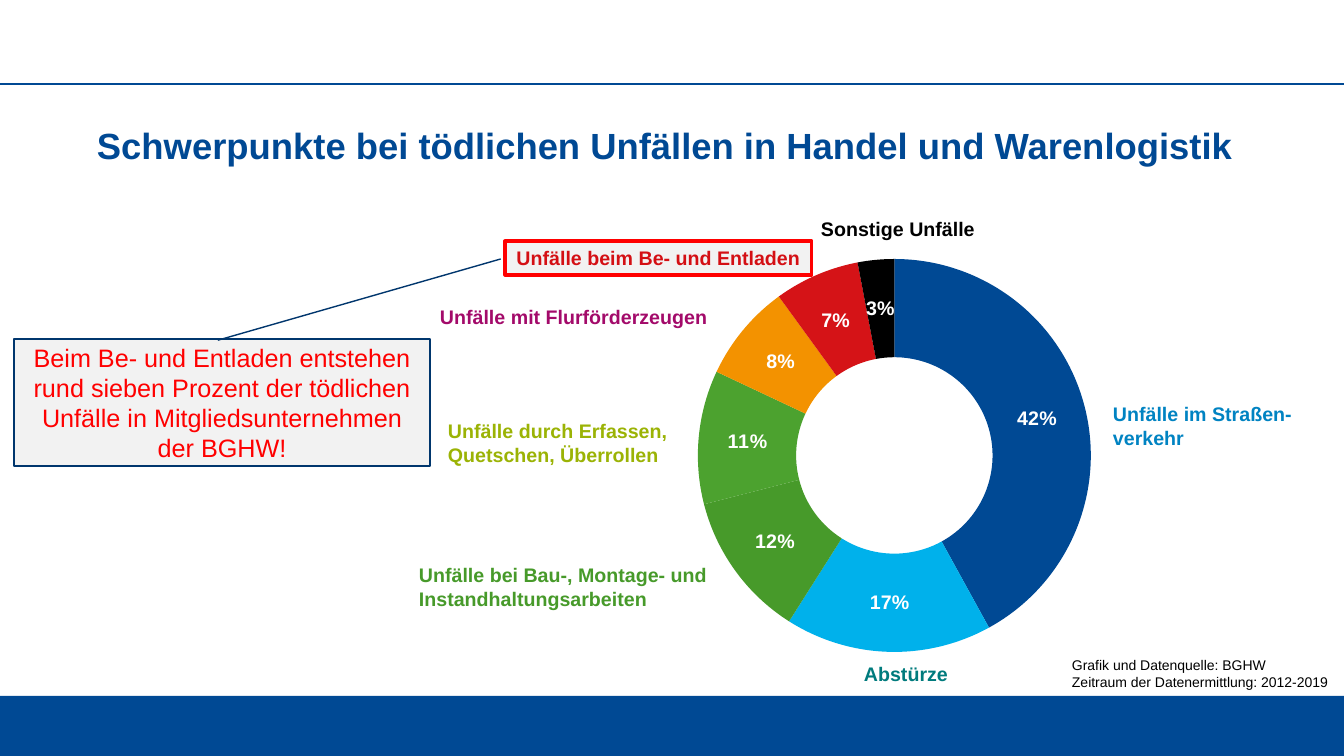
from lxml.etree import SubElement as Sub
from pptx import Presentation
from pptx.chart.data import CategoryChartData as Data
from pptx.dml.color import RGBColor as RGB
from pptx.enum.chart import XL_CHART_TYPE as Chart
from pptx.enum.shapes import MSO_CONNECTOR as Link, MSO_SHAPE as Shape
from pptx.enum.text import MSO_ANCHOR as Anchor, MSO_AUTO_SIZE as Fit, PP_ALIGN as Align
from pptx.oxml.ns import qn
from pptx.util import Pt

SCALE = 12192000 / 1344
WIDE, HIGH = 1344, 756
FONT = "Arial"
HUES = {
    "blue": "004994", "navy": "00366D", "cyan": "00B1EB", "green": "479A2A",
    "leaf": "4CA22F", "orange": "F39200", "red": "D51317", "black": "000000",
    "white": "FFFFFF", "pale": "F2F2F2", "alarm": "FF0000", "load": "D40F14",
    "road": "0083C2", "fall": "007B7D", "lime": "9BB305", "plum": "A30A6A",
}
SHARES = [(42, "blue"), (17, "cyan"), (12, "green"), (11, "leaf"),
          (8, "orange"), (7, "red"), (3, "black")]
LABELS = [
    ((1103, 397, 219, 57), "Unfälle im Straßen-\nverkehr", "road", Align.LEFT),
    ((844, 657, 124, 34), "Abstürze", "fall", Align.CENTER),
    ((409, 558, 337, 57), "Unfälle bei Bau-, Montage- und Instandhaltungsarbeiten",
     "green", Align.LEFT),
    ((438, 414, 254, 57), "Unfälle durch Erfassen, Quetschen, Überrollen",
     "lime", Align.LEFT),
    ((430, 300, 295, 34), "Unfälle mit Flurförderzeugen", "plum", Align.LEFT),
    ((811, 212, 184, 34), "Sonstige Unfälle", "black", Align.LEFT),
]


def px(*nums):
    """Turn pixel lengths into EMU."""
    return [round(n * SCALE) for n in nums]


def hue(name):
    """Look up a colour by name."""
    return RGB.from_string(HUES[name])


def put(obj, form):
    """Set attributes from a dict of format values."""
    for key, value in form.items():
        setattr(obj, key, value)


def style(font, size, tint, bold=False):
    """Give a font its face, size, colour and weight."""
    put(font, {"name": FONT, "size": Pt(size), "bold": bold})
    font.color.rgb = hue(tint)


def write(shape, text, size, tint, bold=False, align=Align.LEFT,
          pad=(10, 5, 10, 5), **form):
    """Fill a shape with styled paragraphs."""
    frame = shape.text_frame
    sides = ("margin_left", "margin_top", "margin_right", "margin_bottom")
    put(frame, {"word_wrap": True, "vertical_anchor": Anchor.TOP,
                **dict(zip(sides, px(*pad))), **form})
    frame.text = text
    for para in frame.paragraphs:
        para.alignment = align
        style(para.font, size, tint, bold)
    return frame


def label(slide, box, text, size, tint, **form):
    """Place a text box."""
    return write(slide.shapes.add_textbox(*px(*box)), text, size, tint, **form)


def panel(slide, box, fill, edge=None, width=0, kind=Shape.RECTANGLE):
    """Place a flat filled shape."""
    shape = slide.shapes.add_shape(kind, *px(*box))
    shape.shadow.inherit = False
    shape.fill.solid()
    shape.fill.fore_color.rgb = hue(fill)
    if edge:
        shape.line.color.rgb = hue(edge)
        shape.line.width = Pt(width)
    else:
        shape.line.fill.background()
    return shape


def frame(slide, box):
    """Draw the footer band and the header rule."""
    left, top, wide, high = box
    panel(slide, (left, top + high - 60, wide, 60), "blue")
    rule = slide.shapes.add_connector(
        Link.STRAIGHT, *px(left, top + 84, left + wide, top + 84))
    rule.line.color.rgb = hue("blue")
    rule.line.width = Pt(2)
    Sub(rule._element.spPr, qn("a:effectLst"))


def title(slide, box):
    """Write the heading."""
    text = label(slide, box, "Schwerpunkte bei tödlichen Unfällen in Handel und Warenlogistik",
                 26, "blue", bold=True, pad=(0, 0, 10, 5))
    text.paragraphs[0].line_spacing = 0.9


def ring(slide, box):
    """Draw the doughnut of accident shares."""
    data = Data()
    data.categories = [str(i + 1) for i in range(len(SHARES))]
    data.add_series("Series 1", [value for value, _ in SHARES])
    chart = slide.shapes.add_chart(Chart.DOUGHNUT, *px(*box), data).chart
    put(chart, {"has_legend": False, "has_title": False})
    style(chart.font, 18, "black")
    plot = chart.plots[0]
    put(plot, {"vary_by_categories": True, "has_data_labels": True})
    put(plot.data_labels, {"show_percentage": True, "show_value": False,
                           "number_format": "0%", "number_format_is_linked": False})
    style(plot.data_labels.font, 14, "white", True)
    for i, (_, tint) in enumerate(SHARES):
        part = plot.series[0].points[i].format
        part.fill.solid()
        part.fill.fore_color.rgb = hue(tint)
        part.line.fill.background()
    area = chart._chartSpace.chart.plotArea
    for old in area.findall(qn("c:layout")):
        area.remove(old)
    lay = Sub(area, qn("c:layout"))
    area.insert(0, lay)
    spot = Sub(lay, qn("c:manualLayout"))
    for tag, value in {"layoutTarget": "inner", "xMode": "edge", "yMode": "edge",
                       "x": "0.17", "y": "0.02", "w": "0.67", "h": "0.98"}.items():
        Sub(spot, qn("c:" + tag)).set("val", value)


def badge(slide, box):
    """Place the framed label for loading accidents."""
    write(panel(slide, box, "pale", "alarm", 2.25), "Unfälle beim Be- und Entladen",
          14, "load", bold=True, align=Align.CENTER, auto_size=Fit.SHAPE_TO_FIT_TEXT)


def note(slide, box):
    """Place the callout that points at the badge."""
    shape = panel(slide, box, "pale", "navy", 1, Shape.LINE_CALLOUT_1)
    for i, value in enumerate((0.01, 0.49, -0.63, 1.17)):
        shape.adjustments[i] = value
    write(shape, "Beim Be- und Entladen entstehen rund sieben Prozent der tödlichen "
          "Unfälle in Mitgliedsunternehmen der BGHW!", 18, "alarm",
          align=Align.CENTER, vertical_anchor=Anchor.MIDDLE)


def source(slide, box):
    """Write the data source."""
    label(slide, box, "Grafik und Datenquelle: BGHW\nZeitraum der Datenermittlung: 2012-2019",
          10, "black", pad=(4, 4, 4, 4), auto_size=Fit.SHAPE_TO_FIT_TEXT)


def main():
    """Build and save the slide."""
    deck = Presentation()
    deck.slide_width, deck.slide_height = px(WIDE, HIGH)
    slide = deck.slides.add_slide(deck.slide_layouts[6])
    frame(slide, (0, 0, WIDE, HIGH))
    title(slide, (97, 128, 1151, 57))
    ring(slide, (598, 251, 587, 401))
    badge(slide, (505, 241, 307, 34))
    note(slide, (14, 339, 416, 127))
    for box, text, tint, align in LABELS:
        label(slide, box, text, 14, tint, bold=True, align=align,
              auto_size=Fit.SHAPE_TO_FIT_TEXT)
    source(slide, (1068, 653, 277, 42))
    deck.save("out.pptx")


if __name__ == "__main__":
    main()
